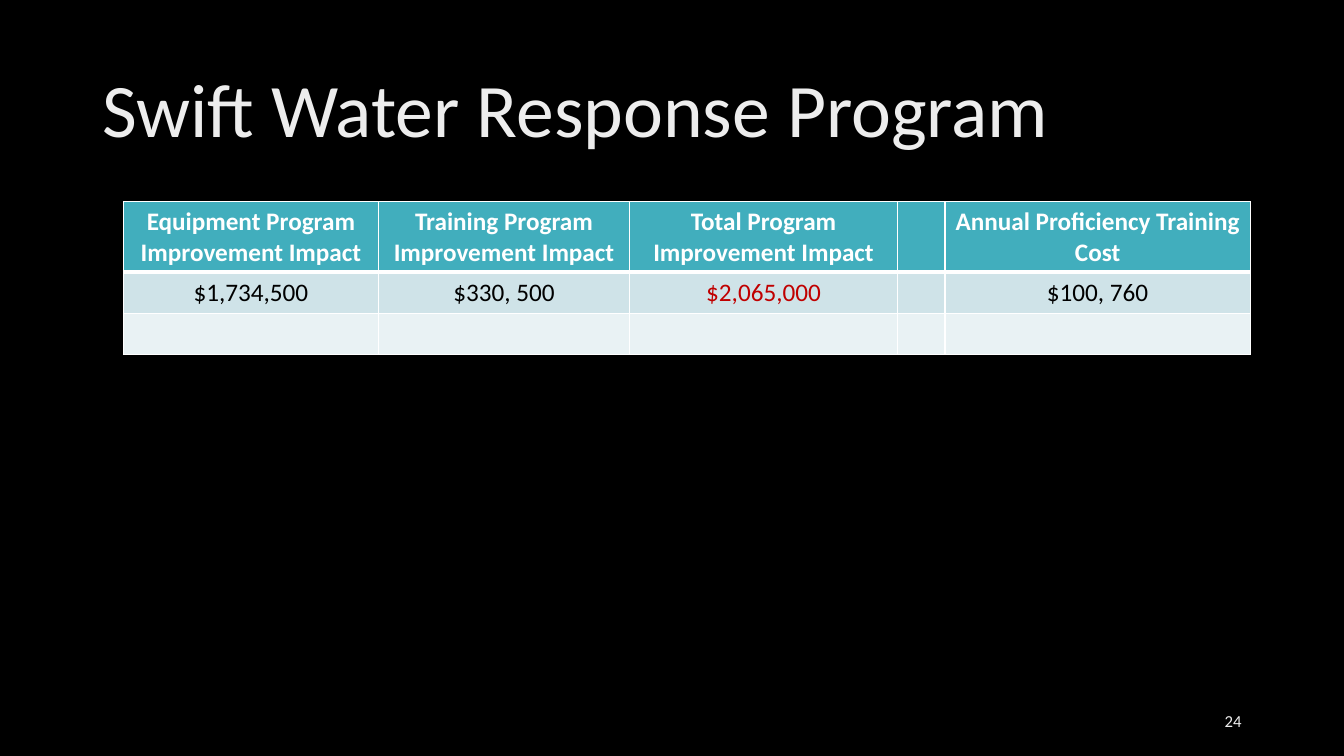
from lxml.etree import SubElement as Sub
from pptx import Presentation
from pptx.dml.color import RGBColor as Rgb
from pptx.enum.text import MSO_ANCHOR as Anchor, PP_ALIGN as Align
from pptx.oxml.ns import qn
from pptx.util import Pt

FONT = "Calibri"
HEX = {
    "back": "000000", "text": "EDEDED", "white": "FFFFFF", "black": "000000",
    "red": "C00000", "head": "41AEBD", "odd": "CFE3E8", "even": "E9F2F4",
}
COLS = [182.2, 179.3, 191.5, 33.8, 218.2]
HIGH = [50.4, 29.5, 29.5]
FILLS = ["head", "odd", "even"]
ROWS = [
    ["Equipment Program Improvement Impact",
     "Training Program Improvement Impact",
     "Total Program Improvement Impact", "",
     "Annual Proficiency Training Cost"],
    ["$1,734,500", "$330, 500", "$2,065,000", "", "$100, 760"],
    [""] * len(COLS),
]
TOTAL = (1, 2)


def color(name):
    return Rgb.from_string(HEX[name])


def style(par, size, name, align, bold=False):
    par.alignment = align
    for run in par.runs:
        font = run.font
        font.name, font.size, font.bold = FONT, Pt(size), bold
        font.color.rgb = color(name)


def add_text(slide, box, text, size, align):
    frame = slide.shapes.add_textbox(*map(Pt, box)).text_frame
    frame.word_wrap = True
    frame.vertical_anchor = Anchor.MIDDLE
    frame.text = text
    par = frame.paragraphs[0]
    style(par, size, "text", align)
    return par


def add_title(slide, box):
    par = add_text(slide, box, "Swift Water Response Program", 54, Align.LEFT)
    par.line_spacing = 0.9


def add_number(slide, box):
    add_text(slide, box, "24", 12, Align.RIGHT)


def set_edges(cell, row):
    # Borders come before the fill in the cell properties
    props = cell._tc.get_or_add_tcPr()
    wide = {"L": 1, "R": 1, "T": 3 if row == 1 else 1, "B": 3 if row == 0 else 1}
    for side, width in wide.items():
        line = Sub(props, qn(f"a:ln{side}"), w=str(Pt(width)))
        fill = Sub(line, qn("a:solidFill"))
        Sub(fill, qn("a:srgbClr"), val=HEX["white"])


def add_costs(slide, box):
    table = slide.shapes.add_table(len(ROWS), len(COLS), *map(Pt, box)).table
    for col, width in zip(table.columns, COLS):
        col.width = Pt(width)
    for r, texts in enumerate(ROWS):
        table.rows[r].height = Pt(HIGH[r])
        for c, text in enumerate(texts):
            cell = table.cell(r, c)
            set_edges(cell, r)
            cell.fill.solid()
            cell.fill.fore_color.rgb = color(FILLS[r])
            cell.text = text
            ink = "white" if r == 0 else "red" if (r, c) == TOTAL else "black"
            style(cell.text_frame.paragraphs[0], 18, ink, Align.CENTER, r == 0)


def main():
    deck = Presentation()
    deck.slide_width, deck.slide_height = Pt(960), Pt(540)
    slide = deck.slides.add_slide(deck.slide_layouts[6])
    back = slide.background.fill
    back.solid()
    back.fore_color.rgb = color("back")

    add_title(slide, (66, 28.8, 828, 104.4))
    add_costs(slide, (88.2, 144, sum(COLS), sum(HIGH)))
    add_number(slide, (678, 500.5, 216, 28.8))
    deck.save("out.pptx")


if __name__ == "__main__":
    main()
